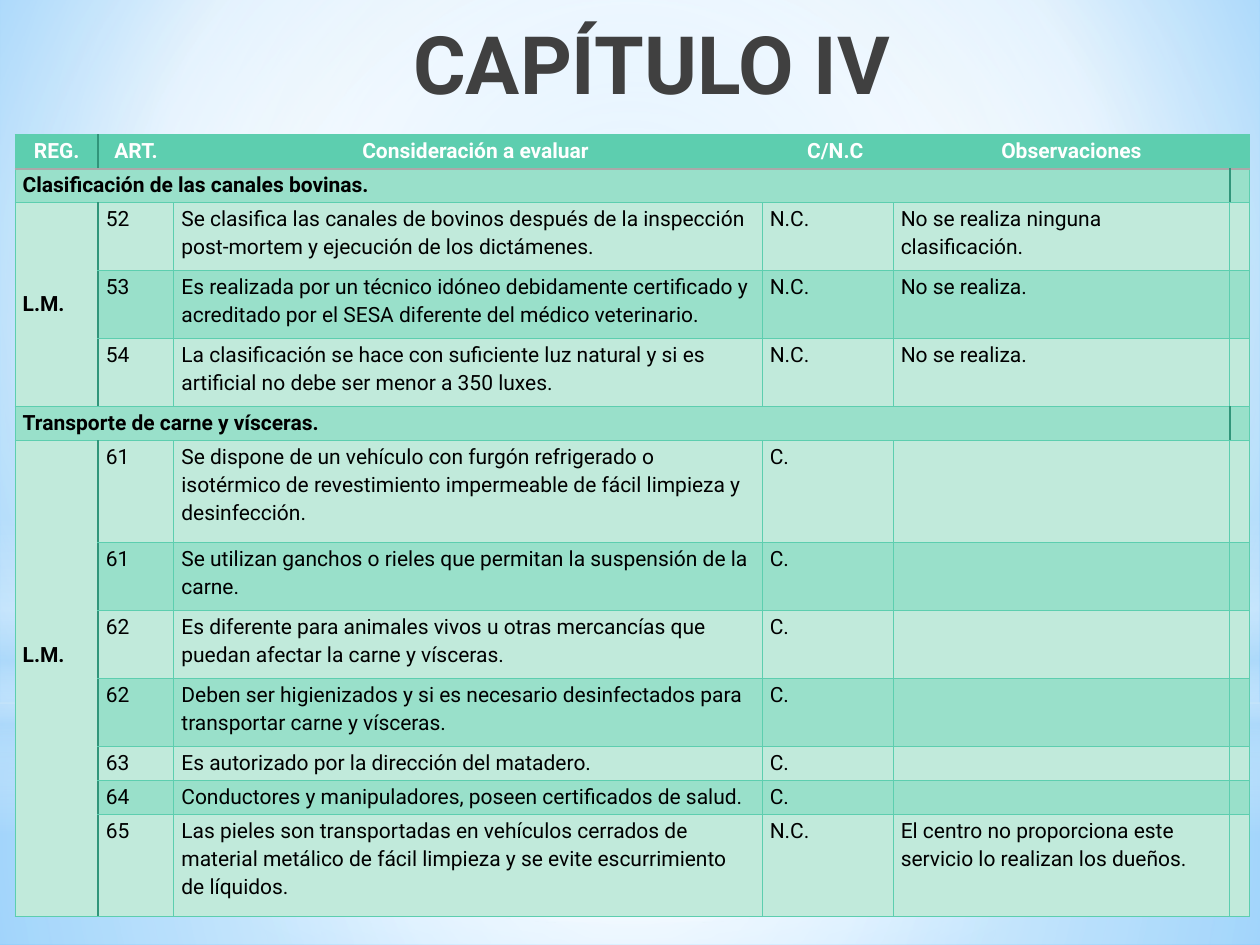
from dataclasses import dataclass

from lxml import etree
from pptx import Presentation
from pptx.dml.color import RGBColor
from pptx.enum.shapes import MSO_SHAPE
from pptx.enum.text import MSO_ANCHOR, MSO_AUTO_SIZE, PP_ALIGN
from pptx.oxml.ns import qn
from pptx.util import Inches, Pt

RECTANGLE, OVAL = MSO_SHAPE.RECTANGLE, MSO_SHAPE.OVAL
CENTER, LEFT = PP_ALIGN.CENTER, PP_ALIGN.LEFT
TOP = MSO_ANCHOR.TOP
TITLE_ONLY = 5


@dataclass(frozen=True)
class Theme:
    font: str = "Roboto"
    title_size: int = 46
    table_size: int = 12
    line_spacing: float = 1.15
    title: str = "404040"
    text: str = "000000"
    header_text: str = "FFFFFF"
    accent: str = "5DCEAF"
    accent_dark: str = "31957A"
    header_rule: str = "A9A9A9"
    band_light: str = "C1EADB"
    band_dark: str = "99E0CA"
    white: str = "FFFFFF"
    haze: str = "B4DCFA"
    thin: float = 0.75
    thick: float = 1.25


THEME = Theme()
MIDDLE = (50, 50, 50, 50)
BACKDROP = [(0, "9ED5FF", 100), (60, THEME.white, 100), (100, "5BB9FF", 100)]
LAYERS = [
    (RECTANGLE, (0, 74.4, 100, 25.6), MIDDLE,
     [(0, THEME.white, 91), (37, THEME.white, 76), (100, THEME.haze, 79)]),
    (RECTANGLE, (0, 0, 100, 74.4), MIDDLE,
     [(0, THEME.white, 89), (48, THEME.white, 62), (100, THEME.haze, 79)]),
    (RECTANGLE, (0, 54.93, 100, 33.33), None,
     [(0, THEME.white, 0), (29, THEME.white, 30), (45, THEME.haze, 40),
      (55, THEME.white, 26), (65, THEME.haze, 60), (100, THEME.white, 0)]),
    (OVAL, (0, 23.33, 100, 74.4), MIDDLE,
     [(0, THEME.white, 100), (56, THEME.white, 0)]),
]

COLUMNS = [6.6, 6, 46.7, 1.2, 9.2, 26.7, 1.2]
ROW_HEIGHT = 3.6
HEADER = ["REG.", "ART.", "Consideración a evaluar", "C/N.C", "Observaciones"]
HEADER_COLUMNS = [0, 1, 2, 4, 5]
BODY_COLUMNS = [1, 2, 3, 5]
REGISTER = "L.M."
SECTIONS = [
    ("Clasificación de las canales bovinas.", 3, [
        (2, "52", "Se clasifica las canales de bovinos después de la inspección post-mortem y ejecución de los dictámenes.",
         "N.C.", "No se realiza ninguna clasificación."),
        (2, "53", "Es realizada por un técnico idóneo debidamente certificado y acreditado por el SESA diferente del médico veterinario.",
         "N.C.", "No se realiza."),
        (2, "54", "La clasificación se hace con suficiente luz natural y si es artificial no debe ser menor a 350 luxes.",
         "N.C.", "No se realiza."),
    ]),
    ("Transporte de carne y vísceras.", 7, [
        (3, "61", "Se dispone de un vehículo con furgón refrigerado o isotérmico de revestimiento impermeable de fácil limpieza y desinfección.",
         "C.", ""),
        (2, "61", "Se utilizan ganchos o rieles que permitan la suspensión de la carne.", "C.", ""),
        (2, "62", "Es diferente para animales vivos u otras mercancías que puedan afectar la carne y vísceras.", "C.", ""),
        (2, "62", "Deben ser higienizados y si es necesario desinfectados para transportar carne y vísceras.", "C.", ""),
        (1, "63", "Es autorizado por la dirección del matadero.", "C.", ""),
        (1, "64", "Conductores y manipuladores, poseen certificados de salud.", "C.", ""),
        (3, "65", "Las pieles son transportadas en vehículos cerrados de material metálico de fácil limpieza y se evite escurrimiento de líquidos.",
         "N.C.", "El centro no proporciona este servicio lo realizan los dueños."),
    ]),
]


def assign(target, values):
    for name, value in values.items():
        setattr(target, name, value)


def gradient_fill(stops, focus):
    gradient = etree.Element(qn("a:gradFill"), rotWithShape="1")
    stop_list = etree.SubElement(gradient, qn("a:gsLst"))
    for position, color, opacity in stops:
        stop = etree.SubElement(stop_list, qn("a:gs"), pos=str(position * 1000))
        paint = etree.SubElement(stop, qn("a:srgbClr"), val=color)
        etree.SubElement(paint, qn("a:alpha"), val=str(opacity * 1000))
    if focus:
        direction = etree.SubElement(gradient, qn("a:path"), {"path": "circle"})
        sides = {side: str(share * 1000) for side, share in zip("ltrb", focus)}
        etree.SubElement(direction, qn("a:fillToRect"), sides)
    else:
        etree.SubElement(gradient, qn("a:lin"), ang="5400000", scaled="0")
    return gradient


class SlideBuilder:
    def __init__(self, presentation, theme):
        self.theme = theme
        self.width, self.height = presentation.slide_width, presentation.slide_height
        self.slide = presentation.slides.add_slide(presentation.slide_layouts[TITLE_ONLY])

    def across(self, share):
        return round(self.width * share / 100)

    def down(self, share):
        return round(self.height * share / 100)

    def frame(self, left, top, width, height):
        return self.across(left), self.down(top), self.across(width), self.down(height)

    def paint_gradient(self, fill, owner, stops, focus):
        fill.solid()
        solid = owner.find(qn("a:solidFill"))
        owner.replace(solid, gradient_fill(stops, focus))

    def background(self, stops, focus):
        fill = self.slide.background.fill
        owner = self.slide.element.find(".//" + qn("p:bgPr"))
        self.paint_gradient(fill, owner, stops, focus)

    def layer(self, kind, area, focus, stops):
        shape = self.slide.shapes.add_shape(kind, *self.frame(*area))
        shape.shadow.inherit = False
        shape.line.fill.background()
        self.paint_gradient(shape.fill, shape.element.spPr, stops, focus)

    def add_text(self, paragraph, text, size, color, bold, alignment):
        paragraph.alignment = alignment
        run = paragraph.add_run()
        run.text = text
        assign(run.font, {"name": self.theme.font, "size": Pt(size), "bold": bold})
        run.font.color.rgb = RGBColor.from_string(color)

    def title(self, text, area):
        shape = self.slide.shapes.title
        names = ("left", "top", "width", "height")
        assign(shape, dict(zip(names, self.frame(*area))))
        assign(shape.text_frame, {"vertical_anchor": TOP, "margin_top": Inches(0.1),
                                  "auto_size": MSO_AUTO_SIZE.NONE, "word_wrap": True})
        self.add_text(shape.text_frame.paragraphs[0], text, self.theme.title_size,
                      self.theme.title, True, CENTER)
        self.slide.shapes.element.append(shape.element)

    def table(self, left, top, columns, row_lines):
        area = self.frame(left, top, sum(columns), ROW_HEIGHT * sum(row_lines))
        table = self.slide.shapes.add_table(len(row_lines), len(columns), *area).table
        assign(table, {"first_row": False, "horz_banding": False})
        for column, share in zip(table.columns, columns):
            column.width = self.across(share)
        for row, lines in zip(table.rows, row_lines):
            row.height = self.down(ROW_HEIGHT * lines)
        return table

    def cell_style(self, cell, color, borders):
        assign(cell, {"margin_left": Inches(0.06), "margin_right": Inches(0.06),
                      "margin_top": 0, "margin_bottom": 0, "vertical_anchor": TOP})
        cell.fill.solid()
        cell.fill.fore_color.rgb = RGBColor.from_string(color)
        paragraph = cell.text_frame.paragraphs[0]
        paragraph.line_spacing = self.theme.line_spacing
        ending = etree.SubElement(paragraph._p, qn("a:endParaRPr"))
        ending.set("sz", str(self.theme.table_size * 100))
        properties = cell._tc.get_or_add_tcPr()
        for index, (side, (line_color, points)) in enumerate(borders.items()):
            line = etree.Element(qn("a:ln" + side), w=str(int(Pt(points))))
            paint = etree.SubElement(line, qn("a:solidFill"))
            etree.SubElement(paint, qn("a:srgbClr"), val=line_color)
            properties.insert(index, line)

    def cell_text(self, cell, text, color, bold=False, alignment=LEFT):
        if text:
            self.add_text(cell.text_frame.paragraphs[0], text, self.theme.table_size,
                          color, bold, alignment)

    def style_grid(self, table, section_rows):
        theme = self.theme
        plain = (theme.accent, theme.thin)
        dark = (theme.accent_dark, theme.thick)
        rule = (theme.header_rule, theme.thick)
        for row in range(len(table.rows)):
            color = theme.band_dark if row % 2 else theme.band_light
            dark_edges = {0, 5} if row in section_rows else {0}
            for column in range(len(table.columns)):
                borders = {"L": dark if column - 1 in dark_edges else plain,
                           "R": dark if column in dark_edges else plain,
                           "T": rule if row == 1 else plain,
                           "B": rule if row == 0 else plain}
                self.cell_style(table.cell(row, column), color if row else theme.accent, borders)

    def checklist(self, left, top):
        theme = self.theme
        row_lines, section_rows = [1], []
        for _, _, items in SECTIONS:
            section_rows.append(len(row_lines))
            row_lines += [1] + [item[0] for item in items]
        table = self.table(left, top, COLUMNS, row_lines)
        self.style_grid(table, section_rows)
        for first in (2, 5):
            table.cell(0, first).merge(table.cell(0, first + 1))
        for column, text in zip(HEADER_COLUMNS, HEADER):
            self.cell_text(table.cell(0, column), text, theme.header_text, True, CENTER)
        for start, (name, lines_above, items) in zip(section_rows, SECTIONS):
            table.cell(start, 0).merge(table.cell(start, 5))
            self.cell_text(table.cell(start, 0), name, theme.text, True)
            register = table.cell(start + 1, 0)
            register.merge(table.cell(start + len(items), 0))
            register.margin_top = Inches(0.225 * lines_above)
            self.cell_text(register, REGISTER, theme.text, True)
            for row, (_, *texts) in enumerate(items, start + 1):
                table.cell(row, 3).merge(table.cell(row, 4))
                for column, text in zip(BODY_COLUMNS, texts):
                    self.cell_text(table.cell(row, column), text, theme.text)


def main():
    presentation = Presentation()
    assign(presentation, {"slide_width": Inches(10), "slide_height": Inches(7.5)})
    builder = SlideBuilder(presentation, THEME)
    builder.background(BACKDROP, (20, 10, 20, 60))
    for layer in LAYERS:
        builder.layer(*layer)
    builder.title("CAPÍTULO IV", (16.1, 0.13, 71.2, 16.67))
    builder.checklist(1.2, 14.27)
    presentation.save("out.pptx")


if __name__ == "__main__":
    main()
